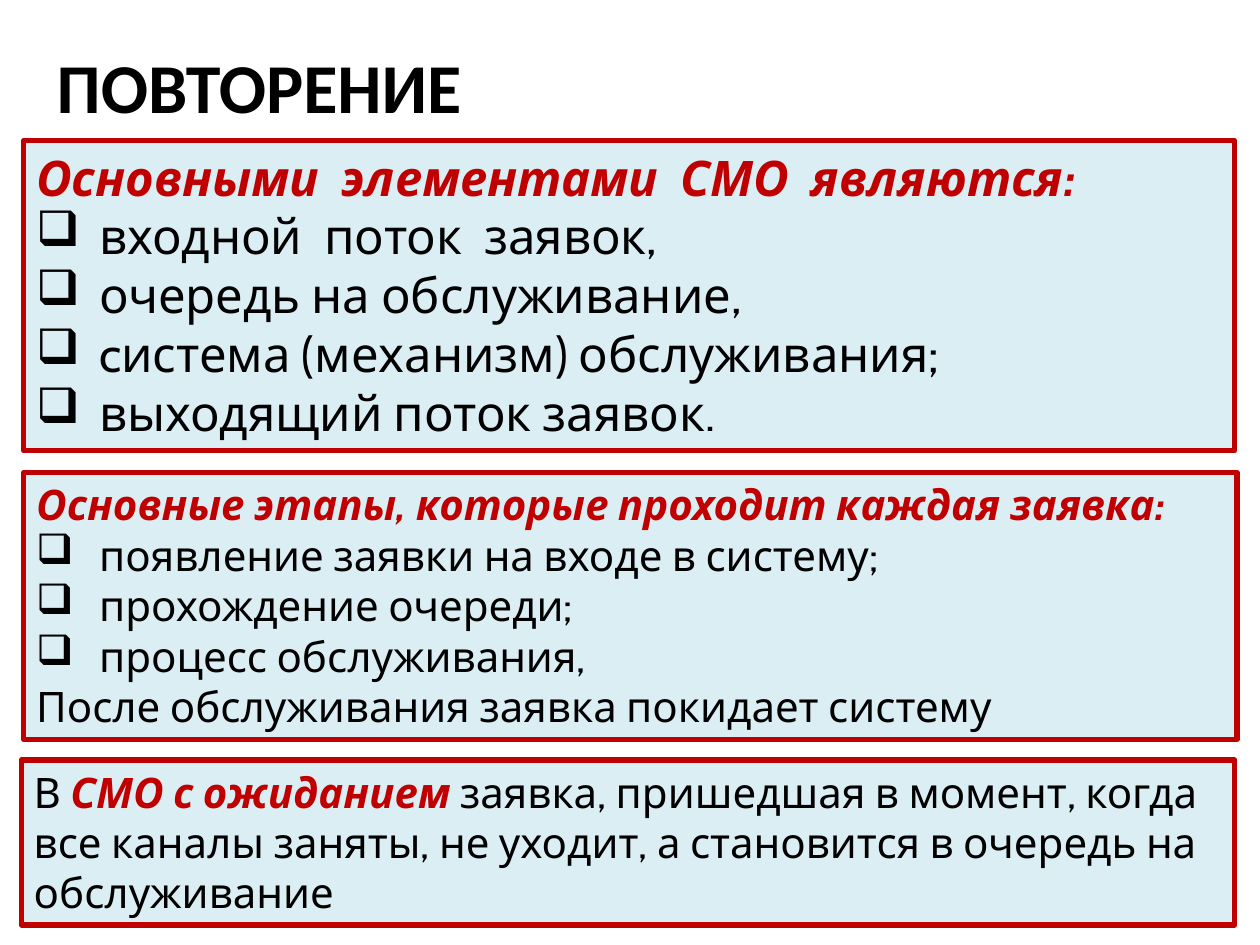
from lxml.etree import SubElement
from pptx import Presentation
from pptx.dml.color import RGBColor
from pptx.enum.shapes import MSO_SHAPE
from pptx.enum.text import MSO_ANCHOR, MSO_AUTO_SIZE, PP_ALIGN
from pptx.oxml.ns import qn
from pptx.util import Cm, Pt

RED, BLACK, PALE = "C00000", "000000", "DBEEF4"


def paint(color, code):
    """Set a colour format to a hex colour."""
    color.rgb = RGBColor.from_string(code)


def style(font, size, code=BLACK, bold=False, slant=False, name="Cabin"):
    """Set the face, size, weight and colour of a font."""
    font.name, font.size = name, Pt(size)
    font.bold, font.italic = bold, slant
    paint(font.color, code)


def add_title(slide, text):
    """Fill and place the title."""
    title = slide.shapes.title
    title.left, title.top, title.width, title.height = Cm(0.89), Cm(0.74), Cm(24), Cm(1.96)
    frame = title.text_frame
    frame.text = text
    frame.auto_size = MSO_AUTO_SIZE.SHAPE_TO_FIT_TEXT
    para = frame.paragraphs[0]
    para.alignment = PP_ALIGN.LEFT
    style(para.font, 40, bold=True, name="Calibri")


def add_panel(slide, left, top, width, height):
    """Add a framed panel and return its text frame."""
    panel = slide.shapes.add_shape(MSO_SHAPE.RECTANGLE, Cm(left), Cm(top), Cm(width), Cm(height))
    panel.shadow.inherit = False
    panel.fill.solid()
    paint(panel.fill.fore_color, PALE)
    paint(panel.line.color, RED)
    panel.line.width = Pt(3)
    frame = panel.text_frame
    frame.word_wrap = True
    frame.auto_size = MSO_AUTO_SIZE.SHAPE_TO_FIT_TEXT
    frame.vertical_anchor = MSO_ANCHOR.TOP
    frame.paragraphs[0].alignment = PP_ALIGN.LEFT
    return frame


def add_line(frame, text, size, mark=False):
    """Add a plain or bulleted line of text."""
    para = frame.add_paragraph()
    para.text = text
    para.alignment = PP_ALIGN.LEFT
    if mark:
        props = para._p.get_or_add_pPr()
        props.set("marL", str(Cm(1.27)))
        props.set("indent", str(-Cm(1.27)))
        SubElement(props, qn("a:buChar"), char="❑")
    style(para.font, size)


def add_list(slide, place, size, head, items, tail=None):
    """Add a panel with a heading, bulleted items and a closing line."""
    frame = add_panel(slide, *place)
    first = frame.paragraphs[0]
    first.text = head
    style(first.font, size, RED, True, True)
    for item in items:
        add_line(frame, item, size, mark=True)
    if tail:
        add_line(frame, tail, size)


def add_note(slide, place, size, parts):
    """Add a panel with one paragraph that holds stressed words."""
    para = add_panel(slide, *place).paragraphs[0]
    for text, stress in parts:
        run = para.add_run()
        run.text = text
        style(run.font, size, RED if stress else BLACK, stress, stress)


def main():
    """Build the slide and save it."""
    deck = Presentation()
    deck.slide_width, deck.slide_height = Cm(25.4), Cm(19.05)
    slide = deck.slides.add_slide(deck.slide_layouts[5])
    add_title(slide, "ПОВТОРЕНИЕ")
    add_list(slide, (0.48, 2.84, 24.41, 6.25), 28, "Основными  элементами  СМО  являются:", [
        "входной  поток  заявок,",
        "очередь на обслуживание,",
        "cистема (механизм) обслуживания;",
        "выходящий поток заявок.",
    ])
    add_list(slide, (0.48, 9.53, 24.46, 5.38), 24, "Основные этапы, которые проходит каждая заявка:", [
        "появление заявки на входе в систему;",
        "прохождение очереди;",
        "процесс обслуживания,",
    ], "После обслуживания заявка покидает систему")
    add_note(slide, (0.43, 15.32, 24.46, 3.33), 24, [
        ("В ", False),
        ("СМО с ожиданием", True),
        (" заявка, пришедшая в момент, когда все каналы заняты, "
         "не уходит, а становится в очередь на обслуживание", False),
    ])
    deck.save("out.pptx")


if __name__ == "__main__":
    main()
